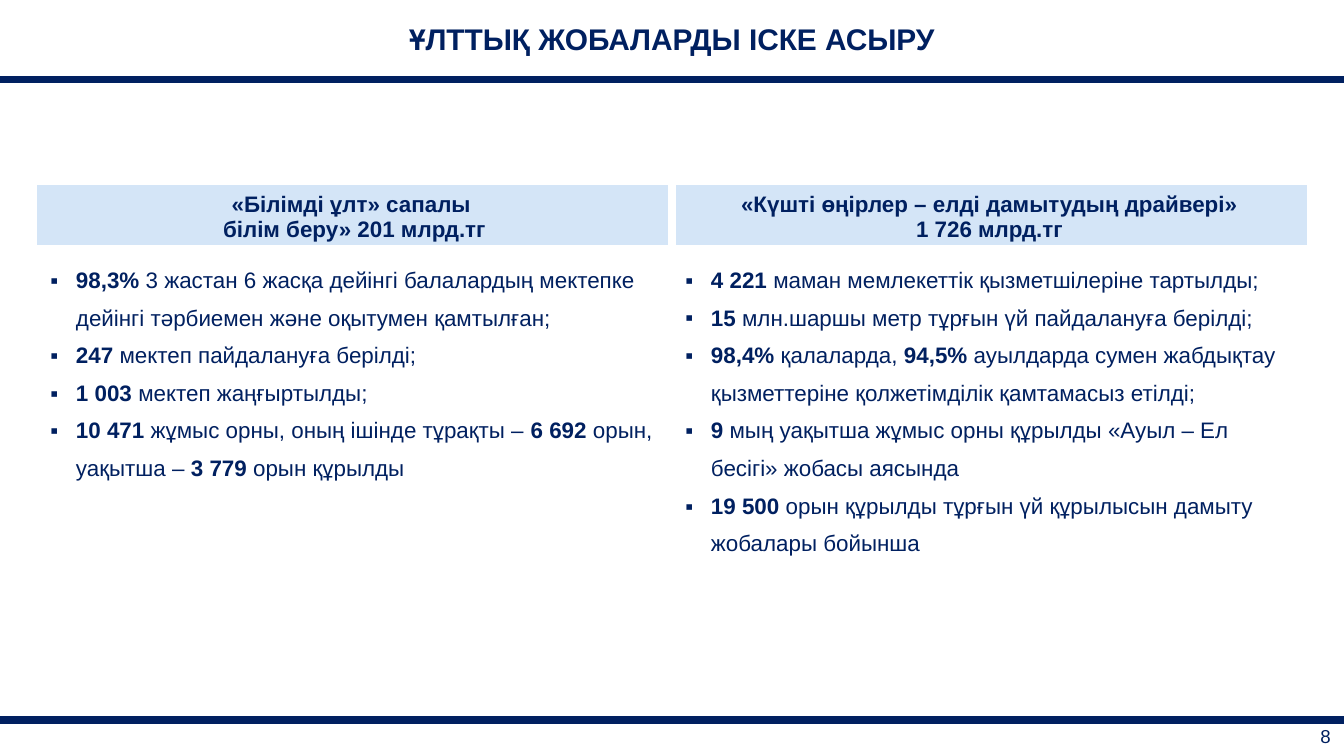
from dataclasses import dataclass

from lxml.etree import SubElement
from pptx import Presentation
from pptx.dml.color import RGBColor
from pptx.enum.text import MSO_ANCHOR, PP_ALIGN
from pptx.oxml import parse_xml
from pptx.oxml.ns import nsdecls, qn
from pptx.util import Emu, Inches, Pt

NAVY = RGBColor(0x00, 0x20, 0x60)
PALE = RGBColor(0xD4, 0xE5, 0xF7)
WHITE = RGBColor(0xFF, 0xFF, 0xFF)
WIDTH = Inches(10)
HEIGHT = Emu(WIDTH * 9 // 16)
RULE = Pt(4.5)
PLAIN = "{2D5ABB26-0587-4C30-8999-92F81FD0307C}"


@dataclass
class Project:
    head: str
    items: list[str]


PROJECTS = [
    Project("«Білімді ұлт» сапалы \nбілім беру» 201 млрд.тг", [
        "*98,3% *3 жастан 6 жасқа дейінгі балалардың мектепке дейінгі "
        "тәрбиемен және оқытумен қамтылған;",
        "*247 *мектеп пайдалануға берілді;",
        "*1 003 *мектеп жаңғыртылды;",
        "*10 471 *жұмыс орны, оның ішінде тұрақты – *6 692 *орын,\n"
        "уақытша – *3 779 *орын құрылды",
    ]),
    Project("«Күшті өңірлер – елді дамытудың драйвері»\n1 726 млрд.тг", [
        "*4 221 *маман мемлекеттік қызметшілеріне тартылды;",
        "*15* млн.шаршы метр тұрғын үй пайдалануға берілді;",
        "*98,4% *қалаларда, *94,5% *ауылдарда сумен жабдықтау "
        "қызметтеріне қолжетімділік қамтамасыз етілді;",
        "*9* мың уақытша жұмыс орны құрылды «Ауыл – Ел бесігі» жобасы аясында",
        "*19 500 *орын құрылды тұрғын үй құрылысын дамыту жобалары бойынша",
    ]),
]


def across(percent: float) -> Emu:
    return Emu(round(WIDTH * percent / 100))


def down(percent: float) -> Emu:
    return Emu(round(HEIGHT * percent / 100))


def style(run, size: float, bold: bool = False) -> None:
    run.font.name = "Arial"
    run.font.size = Pt(size)
    run.font.bold = bold
    run.font.color.rgb = NAVY


def border(cell, sides: str, color: RGBColor) -> None:
    props = cell._tc.get_or_add_tcPr()
    for place, side in enumerate(side for side in "LRTB" if side in sides):
        props.insert(place, parse_xml(
            f'<a:ln{side} {nsdecls("a")} w="{int(RULE)}"><a:solidFill>'
            f'<a:srgbClr val="{color}"/></a:solidFill></a:ln{side}>'))


def add_grid(slide, cols: int, left: float, top: float, width: float,
             rows: list[float]):
    grid = slide.shapes.add_table(
        len(rows), cols, across(left), down(top), across(width),
        down(sum(rows))).table
    grid.first_row = grid.horz_banding = False
    grid._tbl.tblPr.find(qn("a:tableStyleId")).text = PLAIN
    for row, height in zip(grid.rows, rows):
        row.height = down(height)
    for cell in grid.iter_cells():
        cell.fill.background()
    return grid


def fill_text(cell, text: str, size: float, align: PP_ALIGN,
              bold: bool) -> None:
    cell.vertical_anchor = MSO_ANCHOR.MIDDLE
    cell.text_frame.text = text
    for par in cell.text_frame.paragraphs:
        par.alignment = align
        style(par.runs[0], size, bold)


def add_bullet(par) -> None:
    par.line_spacing = 1.5
    props = par._p.get_or_add_pPr()
    props.set("marL", str(Inches(0.19)))
    props.set("indent", str(-Inches(0.19)))
    color = SubElement(props, qn("a:buClr"))
    SubElement(color, qn("a:srgbClr"), val=str(NAVY))
    SubElement(props, qn("a:buFont"), typeface="Arial")
    SubElement(props, qn("a:buChar"), char="▪")


def fill_list(cell, items: list[str]) -> None:
    frame = cell.text_frame
    for row, item in enumerate(items):
        par = frame.add_paragraph() if row else frame.paragraphs[0]
        add_bullet(par)
        for turn, part in enumerate(item.split("*")):
            for line, text in enumerate(part.split("\n")):
                if line:
                    par.add_line_break()
                if text:
                    run = par.add_run()
                    run.text = text
                    style(run, 12, turn % 2 == 1)


def add_strip(slide, text: str, top: float, height: float, side: str,
              size: float, align: PP_ALIGN, bold: bool) -> None:
    cell = add_grid(slide, 1, 0, top, 100, [height]).cell(0, 0)
    fill_text(cell, text, size, align, bold)
    border(cell, side, NAVY)


def add_projects(slide, projects: list[Project]) -> None:
    grid = add_grid(slide, len(projects), 2.75, 24.5, 94.5, [7.3, 35])
    for col, project in enumerate(projects):
        head, body = grid.cell(0, col), grid.cell(1, col)
        head.fill.solid()
        head.fill.fore_color.rgb = PALE
        fill_text(head, project.head, 12, PP_ALIGN.CENTER, True)
        fill_list(body, project.items)
        inner = "L" if col else "R"
        border(head, inner + "B", WHITE)
        border(body, inner + "T", WHITE)


def main() -> None:
    deck = Presentation()
    deck.slide_width, deck.slide_height = WIDTH, HEIGHT
    slide = deck.slides.add_slide(deck.slide_layouts[6])
    add_strip(slide, "ҰЛТТЫҚ ЖОБАЛАРДЫ ІСКЕ АСЫРУ", 0, 10.5, "B", 16,
              PP_ALIGN.CENTER, True)
    add_strip(slide, "8", 95.25, 4.3, "T", 10, PP_ALIGN.RIGHT, False)
    add_projects(slide, PROJECTS)
    deck.save("out.pptx")


if __name__ == "__main__":
    main()
